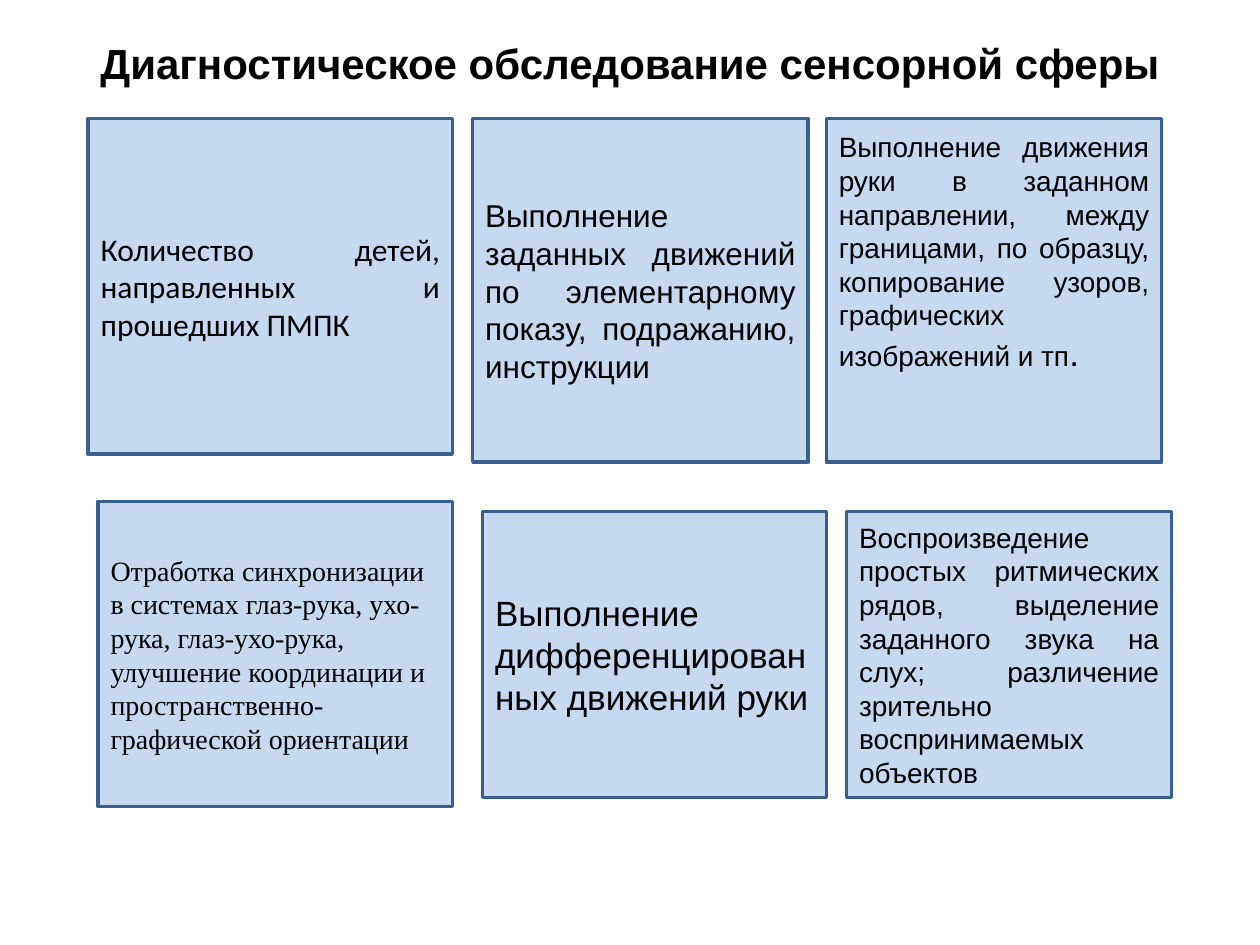
from pptx import Presentation
from pptx.dml.color import RGBColor as Rgb
from pptx.enum.shapes import MSO_SHAPE as Shape
from pptx.enum.text import MSO_ANCHOR as Anchor, PP_ALIGN as Align
from pptx.util import Cm, Pt

COLORS = {"fill": "C6D9F1", "line": "3A5F8C", "text": "000000"}
TOP, LOW = 2.39, 10.31  # tops of the two rows, cm

# Place (left, top, width, height in cm), runs (text, size), font, format
CARDS = [
    ((1.78, TOP, 7.34, 6.76),
     [("Количество детей, направленных и прошедших ПМПК", 18)],
     "Calibri", {}),
    ((9.53, TOP, 6.76, 6.93),
     [("Выполнение заданных движений по элементарному показу, "
       "подражанию, инструкции", 18)],
     "Arial", {}),
    ((16.66, TOP, 6.76, 6.93),
     [("Выполнение движения руки в заданном направлении, между границами, "
       "по образцу, копирование узоров, графических изображений и тп", 16),
      (".", 20)],
     "Arial", {"anchor": Anchor.TOP, "inset": 0.23}),
    ((1.98, 10.11, 7.14, 6.15),
     [("Отработка синхронизации в системах глаз-рука, ухо-рука, "
       "глаз-ухо-рука, улучшение координации и "
       "пространственно-графической ориентации", 16)],
     "Times New Roman", {"align": Align.LEFT}),
    ((9.73, LOW, 6.93, 5.77),
     [("Выполнение дифференцированных движений руки", 20)],
     "Arial", {}),
    ((17.07, LOW, 6.55, 5.77),
     [("Воспроизведение простых ритмических рядов, выделение заданного "
       "звука на слух; различение зрительно воспринимаемых объектов", 16)],
     "Arial", {}),
]


def write(shape, runs, face, align, anchor=Anchor.MIDDLE, inset=0.13,
          bold=False):
    """Fill a shape with one paragraph of runs."""
    frame = shape.text_frame
    form = {"word_wrap": True, "vertical_anchor": anchor,
            "margin_top": Cm(inset)}
    for key, value in form.items():
        setattr(frame, key, value)
    para = frame.paragraphs[0]
    para.alignment = align
    for text, size in runs:
        run = para.add_run()
        run.text = text
        font = {"name": face, "size": Pt(size), "bold": bold}
        for key, value in font.items():
            setattr(run.font, key, value)
        run.font.color.rgb = Rgb.from_string(COLORS["text"])


def add_title(slide, text):
    box = slide.shapes.add_textbox(Cm(1.27), Cm(0.76), Cm(22.86), Cm(1.02))
    write(box, [(text, 24)], "Arial", Align.CENTER, bold=True)


def add_card(slide, place, runs, face, form):
    card = slide.shapes.add_shape(Shape.RECTANGLE, *map(Cm, place))
    card.shadow.inherit = False
    card.fill.solid()
    card.fill.fore_color.rgb = Rgb.from_string(COLORS["fill"])
    card.line.color.rgb = Rgb.from_string(COLORS["line"])
    card.line.width = Pt(2)
    write(card, runs, face, **{"align": Align.JUSTIFY, **form})


def main():
    deck = Presentation()
    deck.slide_width, deck.slide_height = Cm(25.4), Cm(19.05)
    slide = deck.slides.add_slide(deck.slide_layouts[6])

    # Heading
    add_title(slide, "Диагностическое обследование сенсорной сферы")

    # Two rows of cards
    for card in CARDS:
        add_card(slide, *card)

    deck.save("out.pptx")


if __name__ == "__main__":
    main()
